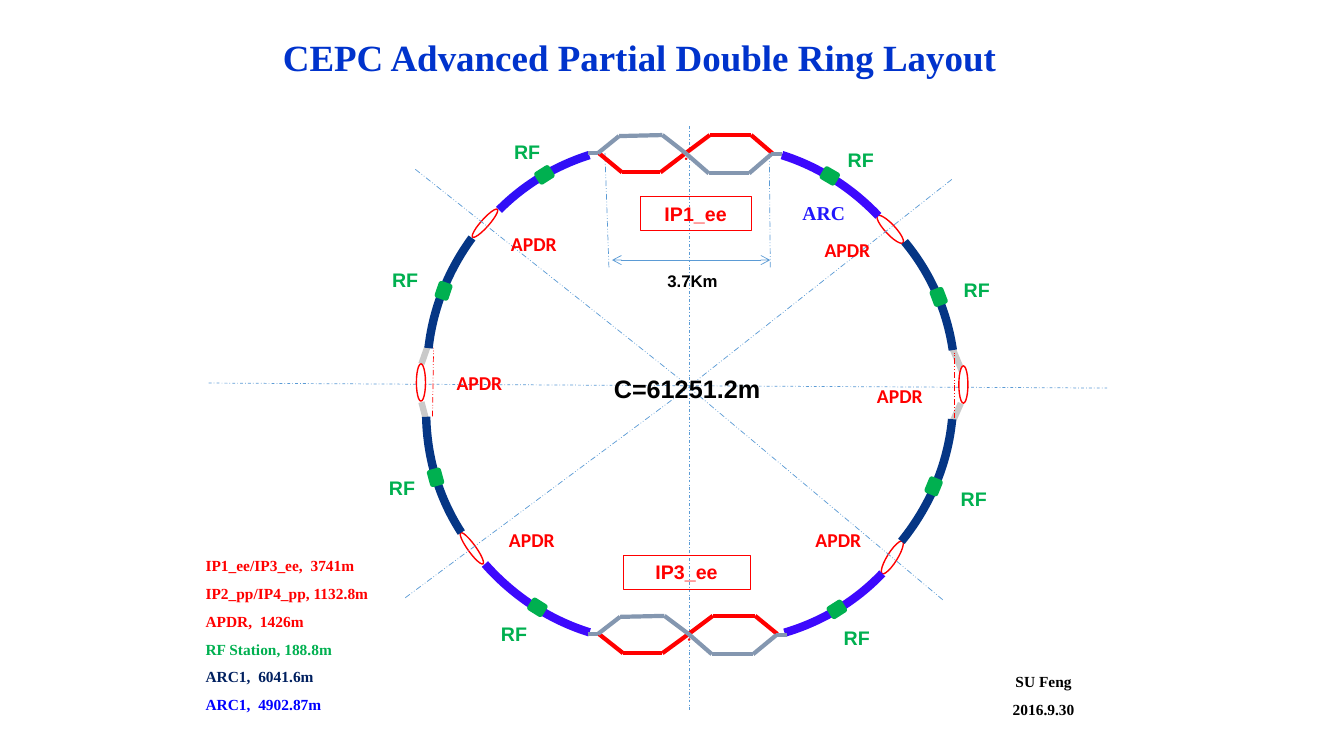
from itertools import pairwise

from lxml import etree
from pptx import Presentation
from pptx import util as u
from pptx.dml.color import RGBColor
from pptx.enum import dml, shapes, text
from pptx.oxml import ns

PX = 9144  # one px is a hundredth of an inch
COLORS = {
    "white": "FFFFFF", "black": "000000", "red": "FF0000", "green": "00B050",
    "guide": "5B9BD5", "title": "0033CC", "arc label": "2116FC", "straight": "C9C9C9",
    "steel": "8497B0", "violet": "3D09FD", "indigo": "300FF7", "navy": "053685",
    "legend navy": "002060", "legend blue": "0000FF",
}
KIND = shapes.MSO_SHAPE
DASH = dml.MSO_LINE

deck = Presentation()
deck.slide_width, deck.slide_height = 1333 * PX, 750 * PX
page = deck.slides.add_slide(deck.slide_layouts[6])


def draw_line(start, end, color, weight, dash=None):
    line = page.shapes.add_connector(
        shapes.MSO_CONNECTOR.STRAIGHT, *[n * PX for n in (*start, *end)])
    line.line.color.rgb = RGBColor.from_string(COLORS[color])
    line.line.width = u.Pt(weight)
    if dash:
        line.line.dash_style = dash
    etree.SubElement(line._element.spPr, ns.qn("a:effectLst"))
    return line


def draw_shape(kind, frame, turn, fill, edge, weight):
    shape = page.shapes.add_shape(kind, *[n * PX for n in frame])
    shape.rotation = turn
    shape.shadow.inherit = False
    if fill:
        shape.fill.solid()
        shape.fill.fore_color.rgb = RGBColor.from_string(COLORS[fill])
    else:
        shape.fill.background()
    shape.line.color.rgb = RGBColor.from_string(COLORS[edge])
    shape.line.width = u.Pt(weight)
    return shape


# Partial double rings on the diagonals
for *frame, turn in [
    (878, 209, 10, 37, 316.9), (880, 534, 10, 38, 32),
    (464, 525, 8, 38, 324.2), (477, 203, 8, 37, 41.7),
]:
    draw_shape(KIND.OVAL, frame, turn, "white", "red", 1)

# Guide lines through the centre
for start, end, dash in [
    ((944, 178), (684, 383), DASH.DASH_DOT_DOT),
    ((935, 595), (683, 384), DASH.DASH_DOT_DOT),
    ((402, 593), (685, 383), DASH.DASH_DOT_DOT),
    ((412, 168), (683, 383), DASH.DASH_DOT_DOT),
    ((207, 380), (1098, 385), DASH.DASH_DOT),
    ((684, 125), (684, 706), DASH.DASH_DOT),
]:
    draw_line(start, end, "guide", 0.5, dash)

# Straight sections beside the left and right rings
for start, end in [
    ((418, 399), (423, 418)), ((424, 344), (418, 361)),
    ((944, 344), (954, 368)), ((953, 400), (945, 418)),
]:
    draw_line(start, end, "straight", 4.5)

# Arcs of the main ring, clockwise from the top
for *frame, turn, first, last, color in [
    (483, 144, 457, 493, 0, 171.099, 187.315, "violet"),
    (481, 153, 457, 493, 46.3, 163.993, 180.728, "navy"),
    (471, 156, 457, 493, 78.3, 170.897, 189.833, "navy"),
    (465, 156, 457, 493, 125.9, 165.957, 182.112, "violet"),
    (417, 144, 457, 493, 175.8, 173.145, 191.06, "violet"),
    (434, 145, 457, 493, 232, 164.564, 181.664, "navy"),
    (438, 119, 459, 489, 257.6, 172.011, 188.999, "navy"),
    (441, 134, 459, 490, 309.8, 164.651, 179.573, "indigo"),
]:
    arc = draw_shape(KIND.ARC, frame, turn, None, color, 6)
    arc.adjustments[0], arc.adjustments[1] = first, last

# Length marker under IP1
draw_line((600, 152), (604, 266), "guide", 0.5, DASH.DASH_DOT_DOT)
draw_line((763, 152), (764, 266), "guide", 0.5, DASH.DASH_DOT_DOT)
marker = draw_line((607, 258), (764, 258), "guide", 0.5)
for end in ("a:headEnd", "a:tailEnd"):
    etree.SubElement(marker.get_or_add_ln(), ns.qn(end), type="arrow")

# Crossing beams at IP1, and again slightly wider at IP3
BEAMS = {
    "red": [(594, 152), (617, 171), (655, 171), (680, 152), (704, 134), (745, 134),
            (766, 152)],
    "steel": [(776, 153), (765, 153), (743, 172), (703, 172), (680, 152), (657, 134),
              (614, 135), (593, 152), (583, 152)],
}
for stretch, drop in [(1, 0), (1.026, 477)]:
    for color, corners in BEAMS.items():
        placed = [(round(583 + (x - 583) * stretch), y + drop) for x, y in corners]
        for start, end in pairwise(placed):
            draw_line(start, end, color, 3)
    crossing = (round(583 + 97 * stretch), 157 + drop, 1, 1)
    draw_shape(KIND.OVAL, crossing, 0, "red", "red", 1)

# Left and right double rings with their chords
for left, top in [(413, 361), (951, 363)]:
    draw_shape(KIND.OVAL, (left, top, 9, 37), 0, "white", "red", 1)
draw_line((429, 413), (430, 345), "red", 0.5, DASH.DASH_DOT_DOT)
draw_line((947, 415), (947, 349), "red", 0.5, DASH.DASH_DOT_DOT)

# RF stations
for left, top, turn in [
    (532, 167, 327.6), (432, 282, 289), (424, 467, 254.9), (525, 596, 32.1),
    (822, 598, 327.6), (815, 168, 210.3), (918, 476, 292.2), (923, 288, 249.2),
]:
    draw_shape(KIND.ROUNDED_RECTANGLE, (left, top, 16, 13), turn, "green", "green", 1)

# Labels: frame, font, size, centred, wrapped, line spacing, lines with colours
SERIF = "Times New Roman"
labels = [
    ((243, 25, 783, 62), SERIF, 26.4, True, True, None,
     [("CEPC Advanced Partial Double Ring Layout", "title")]),
    ((786, 194, 82, 34), SERIF, 14, False, True, None, [("ARC", "arc label")]),
    ((635, 195, 110, 34), "Arial", 14, True, True, None, [("IP1_ee", "red")]),
    ((618, 551, 126, 34), "Arial", 14, True, True, None, [("IP3_ee", "red")]),
    ((652, 264, 71, 30), "Arial", 12, False, False, None, [("3.7Km", "black")]),
    ((599, 365, 167, 40), "Arial", 18, False, False, None, [("C=61251.2m", "black")]),
    ((994, 653, 82, 66), SERIF, 11, True, False, 1.5,
     [("SU Feng", "black"), ("2016.9.30", "black")]),
    ((194, 538, 188, 177), SERIF, 11, False, False, 1.5,
     [("IP1_ee/IP3_ee,  3741m", "red"), ("IP2_pp/IP4_pp, 1132.8m", "red"),
      ("APDR,  1426m", "red"), ("RF Station, 188.8m", "green"),
      ("ARC1,  6041.6m", "legend navy"), ("ARC1,  4902.87m", "legend blue")]),
]
for left, top in [(379, 261), (500, 134), (946, 271), (376, 467),
                  (943, 478), (827, 616), (831, 142), (487, 612)]:
    labels.append(((left, top, 46, 34), "Arial", 14, False, False, None, [("RF", "green")]))
for left, top in [(808, 231), (443, 363), (495, 519), (799, 519), (860, 376), (497, 225)]:
    labels.append(((left, top, 66, 34), "Calibri", 14, False, False, None, [("APDR", "red")]))

for frame, font, size, centred, wrapped, spacing, lines in labels:
    is_title = size == 26.4
    if lines[0][0] in ("IP1_ee", "IP3_ee"):
        box = draw_shape(KIND.RECTANGLE, frame, 0, None, "red", 0.75)
    else:
        box = page.shapes.add_textbox(*[n * PX for n in frame])
    body = box.text_frame
    body.word_wrap = wrapped
    body.auto_size = text.MSO_AUTO_SIZE.NONE if is_title else text.MSO_AUTO_SIZE.SHAPE_TO_FIT_TEXT
    body.vertical_anchor = text.MSO_ANCHOR.MIDDLE if is_title else text.MSO_ANCHOR.TOP
    for number, (words, color) in enumerate(lines):
        para = body.add_paragraph() if number else body.paragraphs[0]
        para.alignment = text.PP_ALIGN.CENTER if centred else text.PP_ALIGN.LEFT
        if spacing:
            para.line_spacing = spacing
        span = para.add_run()
        span.text = words
        span.font.name = font
        span.font.size = u.Pt(size)
        span.font.bold = True
        span.font.color.rgb = RGBColor.from_string(COLORS[color])

deck.save("out.pptx")
